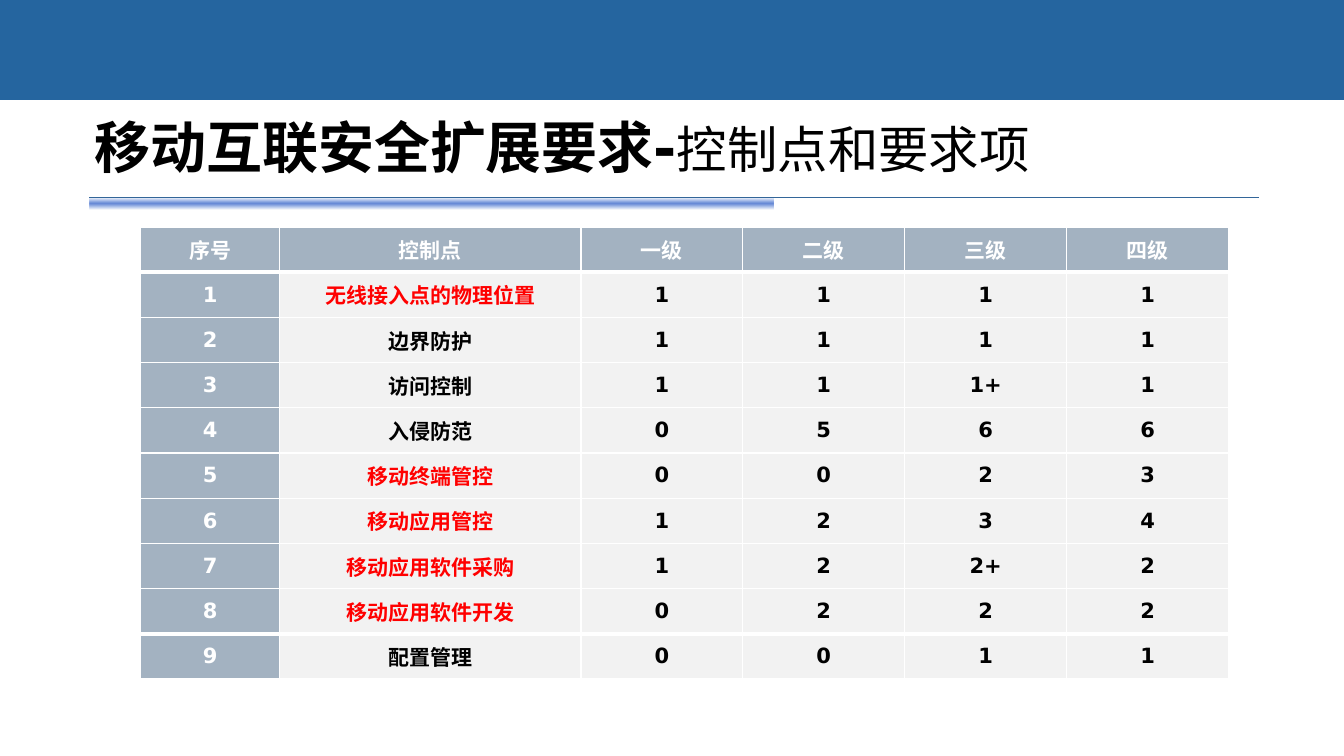
from lxml import etree
from pptx import Presentation
from pptx.dml.color import RGBColor
from pptx.enum.shapes import MSO_CONNECTOR, MSO_SHAPE
from pptx.enum.text import MSO_ANCHOR, PP_ALIGN
from pptx.oxml import parse_xml
from pptx.oxml.ns import nsdecls, qn
from pptx.util import Cm, Pt

RECT = MSO_SHAPE.RECTANGLE
STRAIGHT = MSO_CONNECTOR.STRAIGHT
MIDDLE, BOTTOM = MSO_ANCHOR.MIDDLE, MSO_ANCHOR.BOTTOM
CENTER = PP_ALIGN.CENTER

COLORS = {
    "band": "25659F", "rule": "336699", "bar_edge": "5781D5", "bar_mid": "6387D6",
    "head": "A3B2C1", "body": "F2F2F2", "white": "FFFFFF", "black": "000000", "red": "FF0000",
}
HEADER = ["序号", "控制点", "一级", "二级", "三级", "四级"]
CONTROLS = [
    ("无线接入点的物理位置", "1 1 1 1"),
    ("边界防护", "1 1 1 1"),
    ("访问控制", "1 1 1+ 1"),
    ("入侵防范", "0 5 6 6"),
    ("移动终端管控", "0 0 2 3"),
    ("移动应用管控", "1 2 3 4"),
    ("移动应用软件采购", "1 2 2+ 2"),
    ("移动应用软件开发", "0 2 2 2"),
    ("配置管理", "0 0 1 1"),
]
MOBILE_ONLY = {1, 5, 6, 7, 8}
COL_WIDTHS = [3.51, 7.59] + [4.08] * 4
ROW_HEIGHT = 1.14


class SlideBuilder:
    font = "DejaVu Sans"

    def __init__(self, slide):
        self.slide = slide

    def color(self, name):
        return RGBColor.from_string(COLORS[name])

    def style(self, font, size, color, bold=True):
        font.name = self.font
        font.size = Pt(size)
        font.bold = bold
        font.color.rgb = self.color(color)

    def rect(self, x, y, w, h, fill):
        s = self.slide.shapes.add_shape(RECT, Cm(x), Cm(y), Cm(w), Cm(h))
        s.shadow.inherit = False
        s.fill.solid()
        s.fill.fore_color.rgb = self.color(fill)
        s.line.fill.background()
        return s

    def fading_bar(self, x, y, w, h):
        s = self.rect(x, y, w, h, "bar_mid")
        edge = f'<a:srgbClr val="{COLORS["bar_edge"]}"><a:alpha val="0"/></a:srgbClr>'
        mid = f'<a:srgbClr val="{COLORS["bar_mid"]}"/>'
        stops = "".join(f'<a:gs pos="{pos}">{clr}</a:gs>'
                        for pos, clr in ((0, edge), (50000, mid), (100000, edge)))
        solid = s._element.spPr.find(qn("a:solidFill"))
        solid.getparent().replace(solid, parse_xml(
            f'<a:gradFill {nsdecls("a")} rotWithShape="1"><a:gsLst>{stops}</a:gsLst>'
            '<a:lin ang="5400000" scaled="1"/></a:gradFill>'))

    def line(self, x1, y1, x2, y2, color, width):
        s = self.slide.shapes.add_connector(STRAIGHT, Cm(x1), Cm(y1), Cm(x2), Cm(y2))
        s.line.color.rgb = self.color(color)
        s.line.width = Pt(width)
        etree.SubElement(s._element.spPr, qn("a:effectLst"))

    def title(self, x, y, w, h, runs):
        tf = self.slide.shapes.add_textbox(Cm(x), Cm(y), Cm(w), Cm(h)).text_frame
        tf.word_wrap = True
        tf.vertical_anchor = BOTTOM
        p = tf.paragraphs[0]
        p.line_spacing = 0.8
        for text, size, bold in runs:
            r = p.add_run()
            r.text = text
            self.style(r.font, size, "black", bold)

    def cell(self, cell, text, fill, color, top, bottom):
        cell.fill.solid()
        cell.fill.fore_color.rgb = self.color(fill)
        cell.vertical_anchor = MIDDLE
        cell.margin_left = cell.margin_right = Cm(0.18)
        cell.margin_top = cell.margin_bottom = 0
        p = cell.text_frame.paragraphs[0]
        p.text = text
        p.alignment = CENTER
        self.style(p.font, 15, color)
        tc_pr = cell._tc.get_or_add_tcPr()
        for i, (side, width) in enumerate((("L", 1), ("R", 1), ("T", top), ("B", bottom))):
            tc_pr.insert(i, parse_xml(
                f'<a:ln{side} {nsdecls("a")} w="{Pt(width)}"><a:solidFill>'
                f'<a:srgbClr val="{COLORS["white"]}"/></a:solidFill></a:ln{side}>'))

    def table(self, x, y, rows):
        last = len(rows) - 1
        table = self.slide.shapes.add_table(
            len(rows), len(COL_WIDTHS), Cm(x), Cm(y),
            Cm(sum(COL_WIDTHS)), Cm(ROW_HEIGHT * len(rows))).table
        table.horz_banding = False
        for col, width in zip(table.columns, COL_WIDTHS):
            col.width = Cm(width)
        for i, row in enumerate(rows):
            table.rows[i].height = Cm(ROW_HEIGHT)
            top = 3 if i in (1, last) else 1
            bottom = 3 if i in (0, last - 1) else 1
            for j, text in enumerate(row):
                fill, color = "body", "black"
                if i == 0 or j == 0:
                    fill, color = "head", "white"
                elif j == 1 and i in MOBILE_ONLY:
                    color = "red"
                self.cell(table.cell(i, j), text, fill, color, top, bottom)


def main():
    prs = Presentation()
    prs.slide_width, prs.slide_height = Cm(33.87), Cm(19.05)
    b = SlideBuilder(prs.slides.add_slide(prs.slide_layouts[6]))
    b.fading_bar(2.25, 4.98, 17.25, 0.3)
    b.line(2.25, 4.98, 31.72, 4.98, "rule", 0.75)
    b.rect(0, 0, 33.87, 2.52, "band")
    b.title(2.13, 1.93, 25.4, 2.72,
            [("移动互联安全扩展要求-", 40, True), ("控制点和要求项", 36, False)])
    rows = [HEADER] + [[str(n), name, *levels.split()]
                       for n, (name, levels) in enumerate(CONTROLS, 1)]
    b.table(3.54, 5.72, rows)
    prs.save("out.pptx")


if __name__ == "__main__":
    main()
